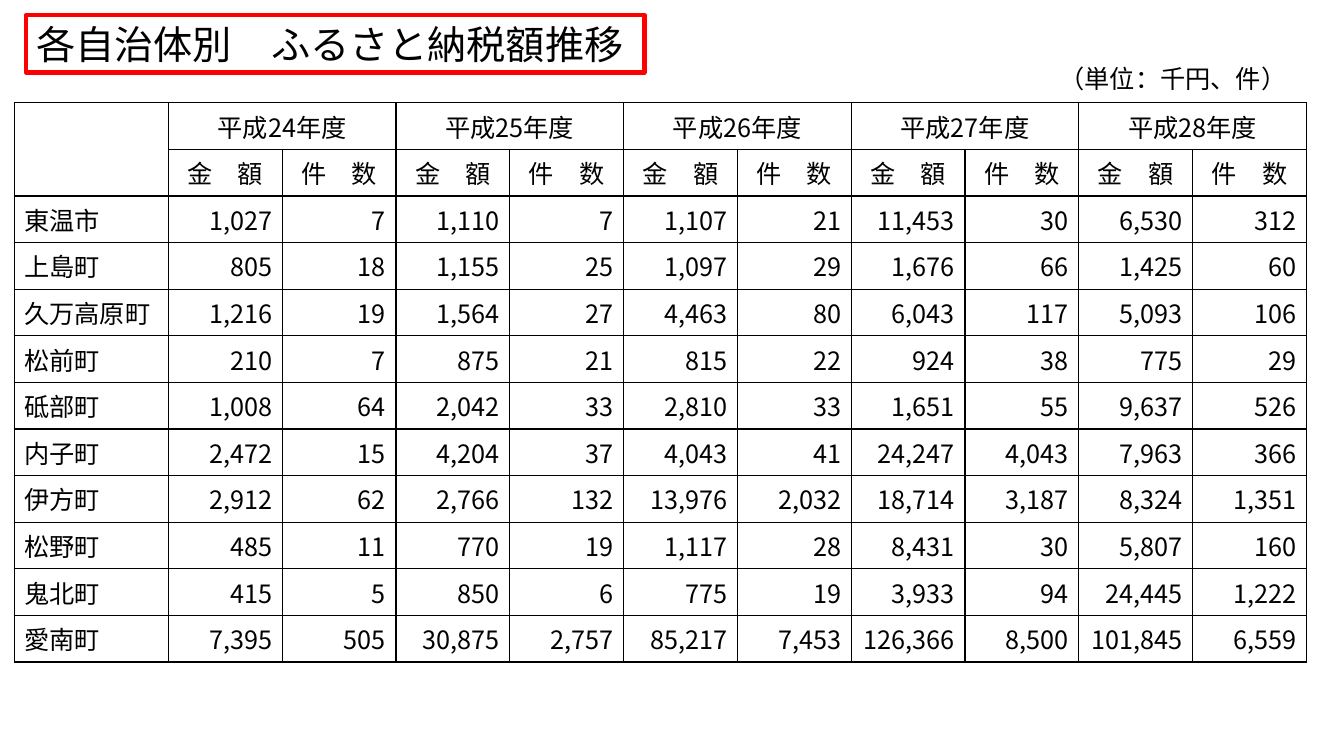
from lxml import etree
from pptx import Presentation
from pptx.dml.color import RGBColor
from pptx.enum.shapes import MSO_SHAPE
from pptx.enum.text import MSO_ANCHOR, PP_ALIGN
from pptx.oxml.ns import qn
from pptx.util import Inches, Pt

LEFT, CENTER, RIGHT = PP_ALIGN.LEFT, PP_ALIGN.CENTER, PP_ALIGN.RIGHT
MIDDLE = MSO_ANCHOR.MIDDLE
RECT = MSO_SHAPE.RECTANGLE
WIDE, HIGH = Inches(13.33), Inches(7.5)
FONT = "Noto Sans CJK JP"
COLORS = {"ink": "000000", "frame": "FF0000"}
LABEL = 11.93

YEARS = [f"平成{year}年度" for year in range(24, 29)]
KINDS = ["金　額", "件　数"]
TOWNS = {
    "東温市": "1,027 7 1,110 7 1,107 21 11,453 30 6,530 312",
    "上島町": "805 18 1,155 25 1,097 29 1,676 66 1,425 60",
    "久万高原町": "1,216 19 1,564 27 4,463 80 6,043 117 5,093 106",
    "松前町": "210 7 875 21 815 22 924 38 775 29",
    "砥部町": "1,008 64 2,042 33 2,810 33 1,651 55 9,637 526",
    "内子町": "2,472 15 4,204 37 4,043 41 24,247 4,043 7,963 366",
    "伊方町": "2,912 62 2,766 132 13,976 2,032 18,714 3,187 8,324 1,351",
    "松野町": "485 11 770 19 1,117 28 8,431 30 5,807 160",
    "鬼北町": "415 5 850 6 775 19 3,933 94 24,445 1,222",
    "愛南町": "7,395 505 30,875 2,757 85,217 7,453 126,366 8,500 101,845 6,559",
}


def place(left, top, width, height):
    """Turn percentages of the slide into lengths."""
    return (int(WIDE * left / 100), int(HIGH * top / 100),
            int(WIDE * width / 100), int(HIGH * height / 100))


def write(frame, text, size=18, align=LEFT, color="ink"):
    """Put one formatted run into a text frame."""
    para = frame.paragraphs[0]
    para.alignment = align
    run = para.add_run()
    run.text = text
    font = run.font
    font.size = Pt(size)
    font.name = FONT
    font.color.rgb = RGBColor.from_string(COLORS[color])
    etree.SubElement(font._element, qn("a:ea"), typeface=FONT)


def add_title(slide, text, box):
    """Add the framed heading."""
    shape = slide.shapes.add_shape(RECT, *box)
    shape.shadow.inherit = False
    shape.fill.background()
    shape.line.color.rgb = RGBColor.from_string(COLORS["frame"])
    shape.line.width = Pt(3.25)
    frame = shape.text_frame
    frame.word_wrap = True
    frame.vertical_anchor = MIDDLE
    write(frame, text, size=28)


def add_note(slide, text, box):
    """Add a plain line of text."""
    frame = slide.shapes.add_textbox(*box).text_frame
    frame.word_wrap = True
    write(frame, text)


def add_edges(cell):
    """Draw thin lines on all four sides of a cell."""
    props = cell._tc.get_or_add_tcPr()
    for side in "LRTB":
        line = etree.SubElement(props, qn(f"a:ln{side}"), w=str(Pt(1)))
        fill = etree.SubElement(line, qn("a:solidFill"))
        etree.SubElement(fill, qn("a:srgbClr"), val=COLORS["ink"])


def add_grid(slide, box):
    """Add the table of amounts and counts by town and year."""
    rows, cols = len(TOWNS) + 2, len(YEARS) * len(KINDS) + 1
    table = slide.shapes.add_table(rows, cols, *box).table
    table.first_row = table.horz_banding = False
    width, height = box[2:]
    first = int(width * LABEL / 100)
    for index, col in enumerate(table.columns):
        col.width = (width - first) // (cols - 1) if index else first
    for row in table.rows:
        row.height = height // rows
    for cell in table.iter_cells():
        add_edges(cell)
        cell.fill.background()
        cell.vertical_anchor = MIDDLE

    table.cell(0, 0).merge(table.cell(1, 0))
    for index, year in enumerate(YEARS):
        start = 1 + index * len(KINDS)
        head = table.cell(0, start)
        head.merge(table.cell(0, start + len(KINDS) - 1))
        write(head.text_frame, year, align=CENTER)
        for shift, kind in enumerate(KINDS):
            write(table.cell(1, start + shift).text_frame, kind, align=CENTER)
    for row, (town, values) in enumerate(TOWNS.items(), 2):
        write(table.cell(row, 0).text_frame, town)
        for col, value in enumerate(values.split(), 1):
            write(table.cell(row, col).text_frame, value, align=RIGHT)


def main():
    """Build and save the slide."""
    deck = Presentation()
    deck.slide_width, deck.slide_height = WIDE, HIGH
    slide = deck.slides.add_slide(deck.slide_layouts[6])
    add_grid(slide, place(1.05, 13.6, 96.17, 73.73))
    add_title(slide, "各自治体別　ふるさと納税額推移", place(1.95, 2, 45.99, 7.6))
    add_note(slide, "（単位：千円、件）", place(78.09, 7.73, 19.2, 5.33))
    deck.save("out.pptx")


if __name__ == "__main__":
    main()
